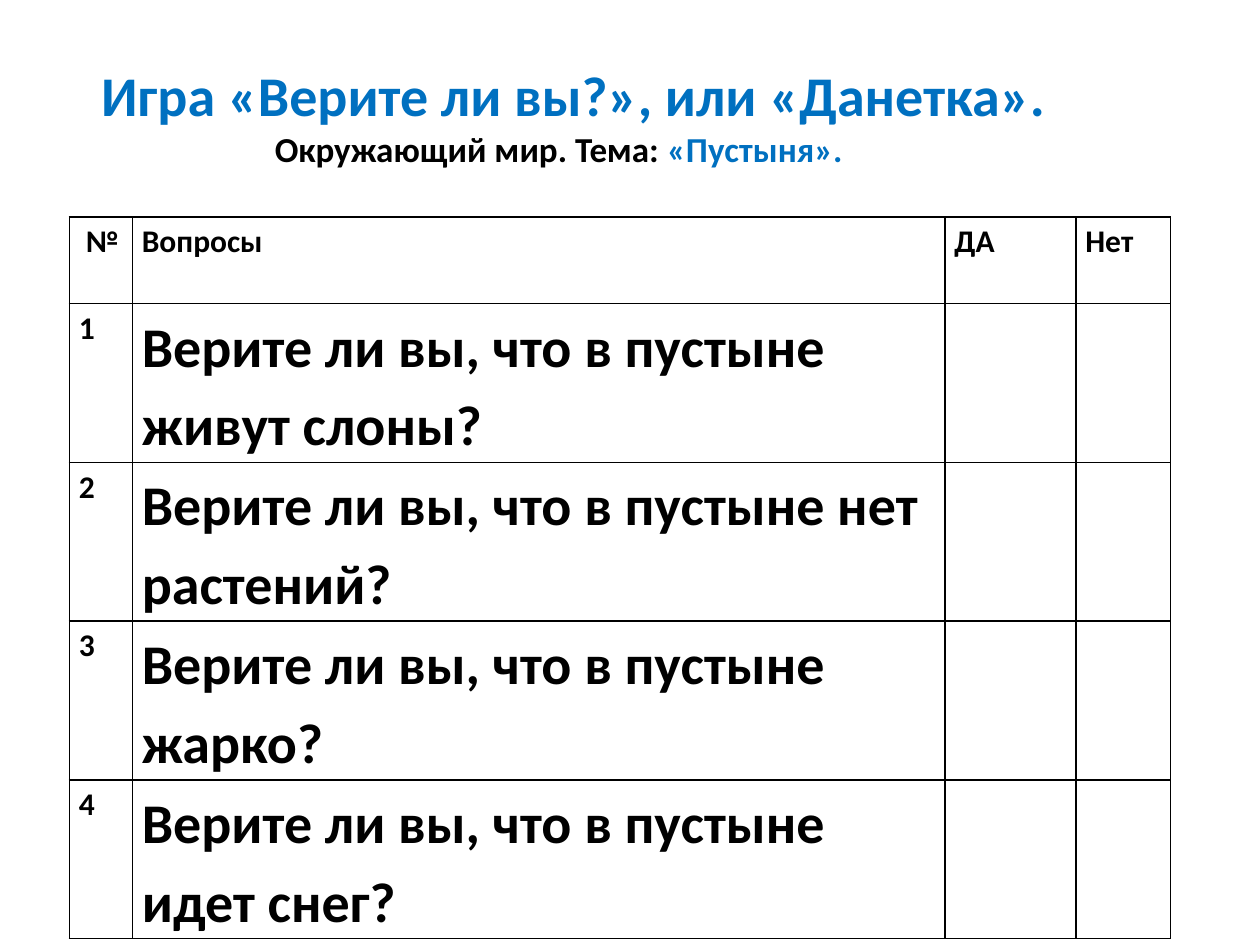
from lxml.etree import SubElement
from pptx import Presentation
from pptx.dml.color import RGBColor
from pptx.enum.text import MSO_ANCHOR
from pptx.oxml.ns import qn
from pptx.util import Cm, Pt

COLORS = {"text": "000000", "accent": "0070C0", "border": "000000"}
FONT = "Calibri"
COLUMN_WIDTHS = [1.27, 16.38, 2.64, 1.91]
HEADER_HEIGHT, QUESTION_HEIGHT = 1.75, 3.2
HEADERS = [" №", "Вопросы", "ДА", "Нет"]
QUESTIONS = [
    "Верите ли вы, что в пустыне живут слоны?",
    "Верите ли вы, что в пустыне нет растений?",
    "Верите ли вы, что в пустыне жарко?",
    "Верите ли вы, что в пустыне идет снег?",
]


def set_font(font, size, color):
    font.name = FONT
    font.size = Pt(size)
    font.bold = True
    font.color.rgb = RGBColor.from_string(COLORS[color])


def write_line(paragraph, indent, size, parts):
    """Fill an indented paragraph with (text, color) runs."""
    paragraph._p.get_or_add_pPr().set("marL", str(Cm(indent)))
    for text, color in parts:
        run = paragraph.add_run()
        run.text = text
        set_font(run.font, size, color)


def add_heading(slide):
    box = slide.shapes.add_textbox(Cm(1.19), Cm(0.99), Cm(22.81), Cm(4.29))
    frame = box.text_frame
    frame.word_wrap = True
    frame.vertical_anchor = MSO_ANCHOR.MIDDLE
    frame.margin_bottom = Cm(1.75)
    write_line(frame.paragraphs[0], 0.6, 32,
               [("Игра «Верите ли вы?», или «Данетка».", "accent")])
    write_line(frame.add_paragraph(), 4.1, 20,
               [("Окружающий мир. Тема: ", "text"), ("«Пустыня».", "accent")])


def style_cell(cell):
    """Give a cell its margins, thin borders and no fill."""
    cell.margin_left = cell.margin_right = Cm(0.19)
    cell.margin_top = cell.margin_bottom = 0
    properties = cell._tc.get_or_add_tcPr()
    for side in ("a:lnL", "a:lnR", "a:lnT", "a:lnB"):
        line = SubElement(properties, qn(side), w=str(Pt(1)))
        fill = SubElement(line, qn("a:solidFill"))
        SubElement(fill, qn("a:srgbClr"), val=COLORS["border"])
    cell.fill.background()


def write_cell(cell, text, size):
    paragraph = cell.text_frame.paragraphs[0]
    paragraph.text = text
    paragraph.line_spacing = 1.15
    paragraph.space_after = Pt(10)
    set_font(paragraph.font, size, "text")


def add_question_table(slide):
    heights = [HEADER_HEIGHT] + [QUESTION_HEIGHT] * len(QUESTIONS)
    table = slide.shapes.add_table(
        len(heights), len(COLUMN_WIDTHS), Cm(1.4), Cm(4.37),
        Cm(sum(COLUMN_WIDTHS)), Cm(sum(heights))).table
    table.first_row = table.horz_banding = False
    for column, width in zip(table.columns, COLUMN_WIDTHS):
        column.width = Cm(width)
    for row, height in zip(table.rows, heights):
        row.height = Cm(height)
    for cell in table.iter_cells():
        style_cell(cell)
    for column, header in enumerate(HEADERS):
        write_cell(table.cell(0, column), header, 18)
    for number, question in enumerate(QUESTIONS, start=1):
        write_cell(table.cell(number, 0), str(number), 18)
        write_cell(table.cell(number, 1), question, 32)


def main():
    presentation = Presentation()
    presentation.slide_width = Cm(25.4)
    presentation.slide_height = Cm(19.05)
    slide = presentation.slides.add_slide(presentation.slide_layouts[6])
    add_heading(slide)
    add_question_table(slide)
    presentation.save("out.pptx")


if __name__ == "__main__":
    main()
